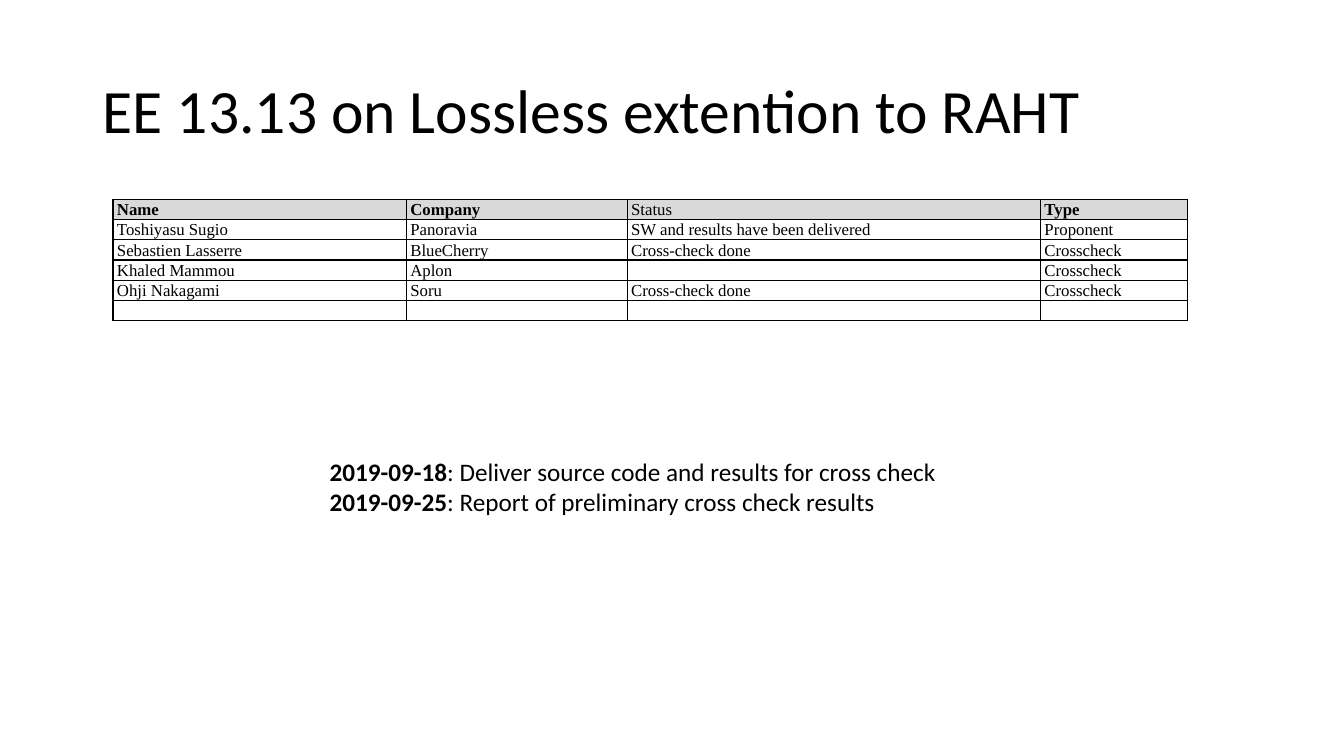
from lxml.etree import SubElement
from pptx import Presentation
from pptx.dml.color import RGBColor
from pptx.enum.text import MSO_ANCHOR, PP_ALIGN
from pptx.oxml.ns import qn
from pptx.util import Inches, Pt

TITLE = "EE 13.13 on Lossless extention to RAHT"
ROWS = [
    ("Name", "Company", "Status", "Type"),
    ("Toshiyasu Sugio", "Panoravia", "SW and results have been delivered", "Proponent"),
    ("Sebastien Lasserre", "BlueCherry", "Cross-check done", "Crosscheck"),
    ("Khaled Mammou", "Aplon", "", "Crosscheck"),
    ("Ohji Nakagami", "Soru", "Cross-check done", "Crosscheck"),
    ("", "", "", ""),
]
BOLD_HEADS = {"Name", "Company", "Type"}
COL_WIDTHS = [2.91, 2.19, 4.1, 1.46]
ROW_HEIGHT = 0.2
MILESTONES = [
    ("2019-09-18", ": Deliver source code and results for cross check"),
    ("2019-09-25", ": Report of preliminary cross check results"),
]
COLORS = {"text": "000000", "border": "000000", "head": "D9D9D9", "body": "FFFFFF"}


def set_font(p, name, size, bold=None):
    p.font.name = name
    p.font.size = Pt(size)
    p.font.bold = bold
    p.font.color.rgb = RGBColor.from_string(COLORS["text"])


def add_borders(cell):
    tcPr = cell._tc.get_or_add_tcPr()
    for side in ("a:lnL", "a:lnR", "a:lnT", "a:lnB"):
        ln = SubElement(tcPr, qn(side), w=str(Pt(1)))
        fill = SubElement(ln, qn("a:solidFill"))
        SubElement(fill, qn("a:srgbClr"), val=COLORS["border"])


def fill_cell(cell, text, is_head):
    add_borders(cell)
    cell.fill.solid()
    cell.fill.fore_color.rgb = RGBColor.from_string(COLORS["head" if is_head else "body"])
    cell.margin_left = cell.margin_right = Inches(0.04)
    cell.margin_top = cell.margin_bottom = 0
    p = cell.text_frame.paragraphs[0]
    p.alignment = PP_ALIGN.JUSTIFY
    p.line_spacing = 1.07
    if text:
        p.add_run().text = text
    else:
        p._p.get_or_add_endParaRPr().set("sz", "1200")
    set_font(p, "Times New Roman", 12, is_head and text in BOLD_HEADS)


prs = Presentation()
prs.slide_width, prs.slide_height = Inches(13.33), Inches(7.5)
s = prs.slides.add_slide(prs.slide_layouts[5])

title = s.shapes.title
title.left, title.top = Inches(0.92), Inches(0.4)
title.width, title.height = Inches(11.5), Inches(1.45)
tf = title.text_frame
tf.text = TITLE
tf.vertical_anchor = MSO_ANCHOR.MIDDLE
p = tf.paragraphs[0]
p.alignment = PP_ALIGN.LEFT
p.line_spacing = 0.9
set_font(p, "Calibri", 44)

table = s.shapes.add_table(
    len(ROWS), len(COL_WIDTHS), Inches(1.12), Inches(1.98),
    Inches(sum(COL_WIDTHS)), Inches(ROW_HEIGHT * len(ROWS))).table
table.first_row = table.horz_banding = False
for col, width in zip(table.columns, COL_WIDTHS):
    col.width = Inches(width)
for i, row in enumerate(ROWS):
    table.rows[i].height = Inches(ROW_HEIGHT)
    for j, text in enumerate(row):
        fill_cell(table.cell(i, j), text, i == 0)

box = s.shapes.add_textbox(Inches(3.17), Inches(4.48), Inches(6.28), Inches(1.01))
tf = box.text_frame
tf.word_wrap = False
for i, (date, task) in enumerate(MILESTONES):
    p = tf.add_paragraph() if i else tf.paragraphs[0]
    r = p.add_run()
    r.text = date
    r.font.bold = True
    p.add_run().text = task
    set_font(p, "Calibri", 18)

prs.save("out.pptx")
